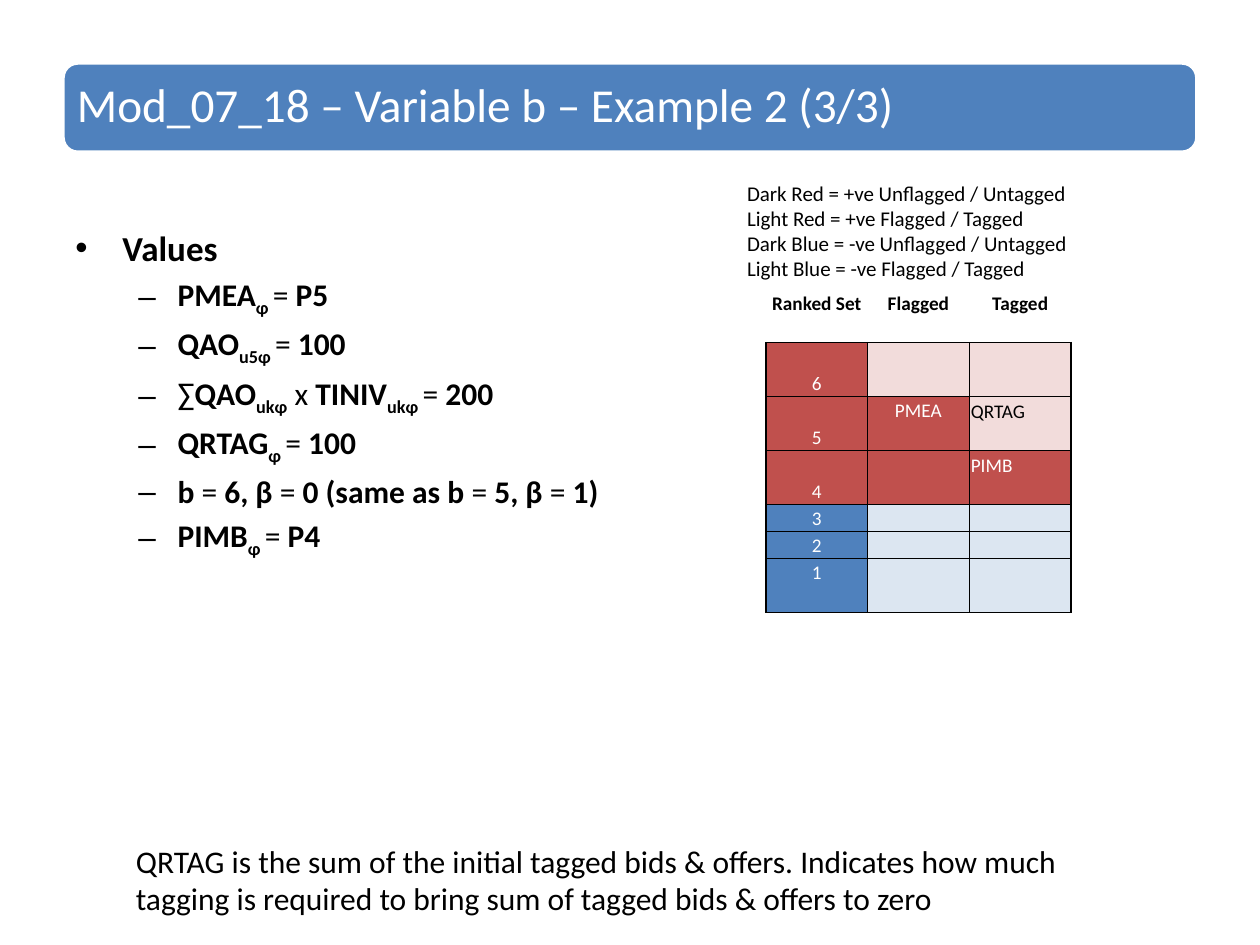
import dataclasses

import lxml.etree
import pptx
import pptx.dml.color
import pptx.enum.shapes
import pptx.enum.text
import pptx.oxml.ns
import pptx.util

Cm, Pt = pptx.util.Cm, pptx.util.Pt
ALIGN = pptx.enum.text.PP_ALIGN
ANCHOR = pptx.enum.text.MSO_ANCHOR
qn = pptx.oxml.ns.qn


@dataclasses.dataclass(frozen=True)
class Theme:
    font: str = "Calibri"
    black: str = "000000"
    white: str = "FFFFFF"
    dark_red: str = "C0504D"
    light_red: str = "F2DCDB"
    dark_blue: str = "4F81BD"
    light_blue: str = "DCE6F1"
    title_size: int = 27
    heading_size: int = 20
    text_size: int = 18
    legend_size: int = 12
    table_size: int = 11


THEME = Theme()

# Runs are bold and split by "|"; "_" marks a subscript, "~" a regular run.
VALUES = [
    "PMEA|_φ |~=| P5",
    "QAO|_u5φ |~=| 100",
    "~∑|QAO|_ukφ|~ x |TINIV|_ukφ |~=| 200",
    "QRTAG|_φ |~=| 100",
    "b |~=| 6, β |~=| 0 (same as b |~=| 5, β |~=| 1)",
    "PIMB|_φ |~=| P4",
]
LEGEND = [
    "Dark Red = +ve Unflagged / Untagged",
    "Light Red = +ve Flagged / Tagged",
    "Dark Blue = -ve Unflagged / Untagged",
    "Light Blue = -ve Flagged / Tagged",
]
NOTE = ("QRTAG is the sum of the initial tagged bids & offers. Indicates how much "
        "tagging is required to bring sum of tagged bids & offers to zero")

HEADERS = ["Ranked Set", "Flagged", "Tagged"]
ROW_COUNT, FIRST_RANK_ROW = 18, 2
RED, PINK = THEME.dark_red, THEME.light_red
BLUE, PALE = THEME.dark_blue, THEME.light_blue
# Rows taken by each rank, and its fill in each column
RANKS = [
    (2, (RED, PINK, PINK)),
    (2, (RED, RED, PINK)),
    (2, (RED, RED, RED)),
    (1, (BLUE, PALE, PALE)),
    (1, (BLUE, PALE, PALE)),
    (2, (BLUE, PALE, PALE)),
]
RANK_LABELS = {3: "6", 5: "5", 7: "4", 8: "3", 9: "2", 10: "1"}


def rgb(color):
    return pptx.dml.color.RGBColor.from_string(color)


def add_text(p, text, size=THEME.text_size, color=THEME.black, bold=False, baseline=0):
    r = p.add_run()
    r.text = text
    r.font.name = THEME.font
    r.font.size = Pt(size)
    r.font.bold = bold
    r.font.color.rgb = rgb(color)
    if baseline:
        r._r.get_or_add_rPr().set("baseline", str(baseline * 1000))
    return r


def set_bullet(p, char, left, hanging):
    pPr = p._p.get_or_add_pPr()
    pPr.set("marL", str(Cm(left)))
    pPr.set("indent", str(-Cm(hanging)))
    lxml.etree.SubElement(pPr, qn("a:buFont")).set("typeface", "Arial")
    lxml.etree.SubElement(pPr, qn("a:buChar")).set("char", char)


def set_borders(cell, sides):
    """Rule the named sides (L, R, T, B) in black and leave the others clear."""
    tcPr = cell._tc.get_or_add_tcPr()
    for side in "LRTB":
        ln = lxml.etree.SubElement(tcPr, qn("a:ln" + side), w=str(Pt(1)))
        if side in sides:
            fill = lxml.etree.SubElement(ln, qn("a:solidFill"))
            lxml.etree.SubElement(fill, qn("a:srgbClr")).set("val", THEME.black)
        else:
            lxml.etree.SubElement(ln, qn("a:noFill"))


class SlideBuilder:
    def __init__(self, prs, theme):
        self.theme = theme
        self.s = prs.slides.add_slide(prs.slide_layouts[5])

    def title(self, text, *box):
        box = [Cm(v) for v in box]
        banner = self.s.shapes.add_shape(
            pptx.enum.shapes.MSO_SHAPE.ROUNDED_RECTANGLE, *box)
        banner.shadow.inherit = False
        banner.fill.solid()
        banner.fill.fore_color.rgb = rgb(self.theme.dark_blue)
        banner.line.color.rgb = rgb(self.theme.white)
        banner.line.width = Pt(2)

        sp = self.s.shapes.title
        sp.left, sp.top, sp.width, sp.height = box
        banner.element.addnext(sp.element)
        tf = sp.text_frame
        tf.auto_size = pptx.enum.text.MSO_AUTO_SIZE.NONE
        tf.vertical_anchor = ANCHOR.MIDDLE
        tf.margin_left = tf.margin_right = tf.margin_top = tf.margin_bottom = Cm(0.28)
        p = tf.paragraphs[0]
        p.alignment = ALIGN.LEFT
        p.line_spacing = 0.9
        add_text(p, text, size=self.theme.title_size, color=self.theme.white)

    def text_box(self, *box):
        tf = self.s.shapes.add_textbox(*[Cm(v) for v in box]).text_frame
        tf.word_wrap = True
        return tf

    def paragraphs(self, lines, size, *box):
        tf = self.text_box(*box)
        for i, line in enumerate(lines):
            p = tf.add_paragraph() if i else tf.paragraphs[0]
            add_text(p, line, size=size)

    def bullets(self, heading, items, *box):
        tf = self.text_box(*box)
        p = tf.paragraphs[0]
        p.space_before = Pt(4)
        set_bullet(p, "•", 0.95, 0.95)
        add_text(p, heading, size=self.theme.heading_size, bold=True)
        for item in items:
            p = tf.add_paragraph()
            p.level = 1
            p.space_before = Pt(3.6)
            set_bullet(p, "–", 2.06, 0.79)
            for part in item.split("|"):
                add_text(p, part.lstrip("_~"), bold=not part.startswith("~"),
                         baseline=-25 if part.startswith("_") else 0)

    def cell(self, cell, text="", fill=None, sides="", color=None, bold=False,
             align=ALIGN.CENTER, anchor=ANCHOR.MIDDLE):
        set_borders(cell, sides)
        if fill:
            cell.fill.solid()
            cell.fill.fore_color.rgb = rgb(fill)
        else:
            cell.fill.background()
        cell.margin_left = cell.margin_right = cell.margin_top = Cm(0.03)
        cell.margin_bottom = 0
        cell.vertical_anchor = anchor
        p = cell.text_frame.paragraphs[0]
        p.alignment = align
        if text:
            add_text(p, text, size=self.theme.table_size, bold=bold,
                     color=color or self.theme.white)
        else:
            end = lxml.etree.SubElement(p._p, qn("a:endParaRPr"))
            end.set("sz", str(self.theme.table_size * 100))

    def rank_table(self, *box):
        table = self.s.shapes.add_table(
            ROW_COUNT, len(HEADERS), *[Cm(v) for v in box]).table
        table.first_row = table.horz_banding = False
        for row in table.rows:
            row.height = Cm(box[3] / ROW_COUNT)

        fills, edges = {}, {FIRST_RANK_ROW}
        for span, colors in RANKS:
            start = max(edges)
            fills.update((row, colors) for row in range(start, start + span))
            edges.add(start + span)

        texts = {(row, 0): dict(text=label) for row, label in RANK_LABELS.items()}
        for col, header in enumerate(HEADERS):
            texts[0, col] = dict(text=header, bold=True, color=self.theme.black,
                                 anchor=ANCHOR.BOTTOM)
        tagged = dict(align=ALIGN.LEFT, anchor=ANCHOR.BOTTOM)
        texts[4, 1] = dict(text="PMEA")
        texts[4, 2] = dict(text="QRTAG", color=self.theme.black, **tagged)
        texts[6, 2] = dict(text="PIMB", **tagged)

        for row in range(ROW_COUNT):
            sides = (("LR" if row in fills else "") + ("T" if row in edges else "")
                     + ("B" if row + 1 in edges else ""))
            for col in range(len(HEADERS)):
                fill = fills[row][col] if row in fills else None
                self.cell(table.cell(row, col), fill=fill, sides=sides,
                          **texts.get((row, col), {}))


def main():
    prs = pptx.Presentation()
    prs.slide_width, prs.slide_height = Cm(25.4), Cm(19.05)
    slide = SlideBuilder(prs, THEME)
    slide.bullets("Values", VALUES, 1.27, 4.45, 14.22, 12.57)
    slide.rank_table(15.44, 5.82, 6.15, 9.8)
    slide.title("Mod_07_18 – Variable b – Example 2 (3/3)", 1.27, 1.27, 22.86, 1.8)
    slide.paragraphs(LEGEND, THEME.legend_size, 14.81, 3.51, 8.15, 2.31)
    slide.paragraphs([NOTE], THEME.text_size, 2.49, 16.84, 19.94, 1.8)
    prs.save("out.pptx")


if __name__ == "__main__":
    main()
